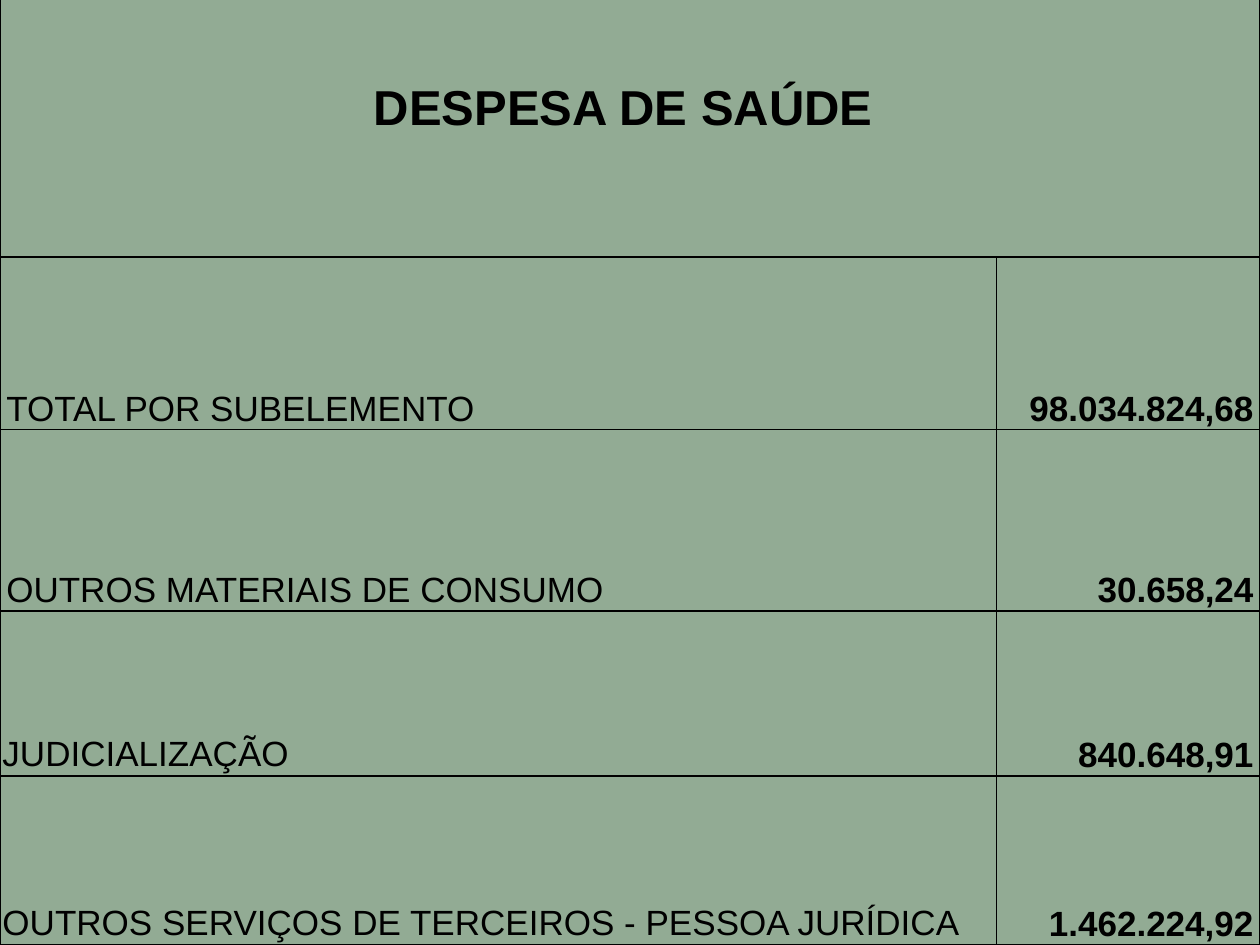
from dataclasses import dataclass

from lxml import etree
from pptx import Presentation
from pptx import util as u
from pptx.dml.color import RGBColor
from pptx.enum import text
from pptx.oxml import ns


@dataclass(frozen=True)
class Theme:
    font: str = "Arial"
    ink: str = "000000"
    cell: str = "AAC8AD"
    cell_opacity: int = 86
    title_size: int = 28
    body_size: int = 20
    border: int = 1


class SlideBuilder:
    def __init__(self, slide, theme):
        self.slide = slide
        self.theme = theme

    def background(self):
        fill = self.slide.background.fill
        fill.solid()
        fill.fore_color.rgb = RGBColor.from_string(self.theme.ink)

    def table(self, left, top, widths, heights):
        frame = self.slide.shapes.add_table(
            len(heights), len(widths), u.Inches(left), u.Inches(top),
            u.Inches(sum(widths)), u.Inches(sum(heights)))
        grid = frame.table
        grid.first_row = grid.horz_banding = False
        for column, width in zip(grid.columns, widths):
            column.width = u.Inches(width)
        for row, height in zip(grid.rows, heights):
            row.height = u.Inches(height)
        for cell in grid.iter_cells():
            self.cell_style(cell)
        return grid

    def cell_style(self, cell):
        # Translucent fill
        cell.fill.solid()
        cell.fill.fore_color.rgb = RGBColor.from_string(self.theme.cell)
        properties = cell._tc.tcPr
        color = properties.find(".//" + ns.qn("a:srgbClr"))
        etree.SubElement(color, ns.qn("a:alpha"),
                         val=str(self.theme.cell_opacity * 1000))
        # Borders come before the fill
        for place, side in enumerate(("lnL", "lnR", "lnT", "lnB")):
            line = etree.Element(ns.qn("a:" + side),
                                 w=str(u.Pt(self.theme.border)))
            solid = etree.SubElement(line, ns.qn("a:solidFill"))
            etree.SubElement(solid, ns.qn("a:srgbClr"), val=self.theme.ink)
            properties.insert(place, line)

    def cell_text(self, cell, words, size, bold, align, anchor, insets):
        side, edge = map(u.Inches, insets)
        cell.margin_left = cell.margin_right = side
        cell.margin_top = cell.margin_bottom = edge
        cell.vertical_anchor = anchor
        paragraph = cell.text_frame.paragraphs[0]
        paragraph.alignment = align
        run = paragraph.add_run()
        run.text = words
        run.font.name = self.theme.font
        run.font.size = u.Pt(size)
        run.font.bold = bold
        run.font.color.rgb = RGBColor.from_string(self.theme.ink)
        return paragraph

    def entry(self, cell, words, bold, align, insets):
        paragraph = self.cell_text(cell, words, self.theme.body_size, bold,
                                   align, text.MSO_ANCHOR.BOTTOM, insets)
        paragraph.line_spacing = 1.07
        paragraph.space_after = u.Pt(8)


def main():
    deck = Presentation()
    deck.slide_width, deck.slide_height = u.Inches(10), u.Inches(7.5)
    theme = Theme()
    builder = SlideBuilder(deck.slides.add_slide(deck.slide_layouts[6]), theme)
    builder.background()

    # Expense table, starting a little above the slide
    expenses = builder.table(0, -0.32, [7.91, 2.09],
                             [2.36, 1.37, 1.44, 1.31, 1.34])

    # Heading across both columns
    heading = expenses.cell(0, 0)
    heading.merge(expenses.cell(0, 1))
    builder.cell_text(heading, "DESPESA DE SAÚDE ", theme.title_size, True,
                      text.PP_ALIGN.CENTER, text.MSO_ANCHOR.MIDDLE,
                      (0.04, 0.01))

    # Expense names and amounts
    normal, tight = (0.05, 0.01), (0.02, 0.02)
    items = [
        ("TOTAL POR SUBELEMENTO", "98.034.824,68", normal),
        ("OUTROS MATERIAIS DE CONSUMO", "30.658,24", normal),
        ("JUDICIALIZAÇÃO", "840.648,91", tight),
        ("OUTROS SERVIÇOS DE TERCEIROS - PESSOA JURÍDICA", "1.462.224,92",
         tight),
    ]
    for row, (name, amount, name_insets) in enumerate(items, start=1):
        builder.entry(expenses.cell(row, 0), name, False,
                      text.PP_ALIGN.LEFT, name_insets)
        builder.entry(expenses.cell(row, 1), amount, True,
                      text.PP_ALIGN.RIGHT, normal)

    deck.save("out.pptx")


if __name__ == "__main__":
    main()
